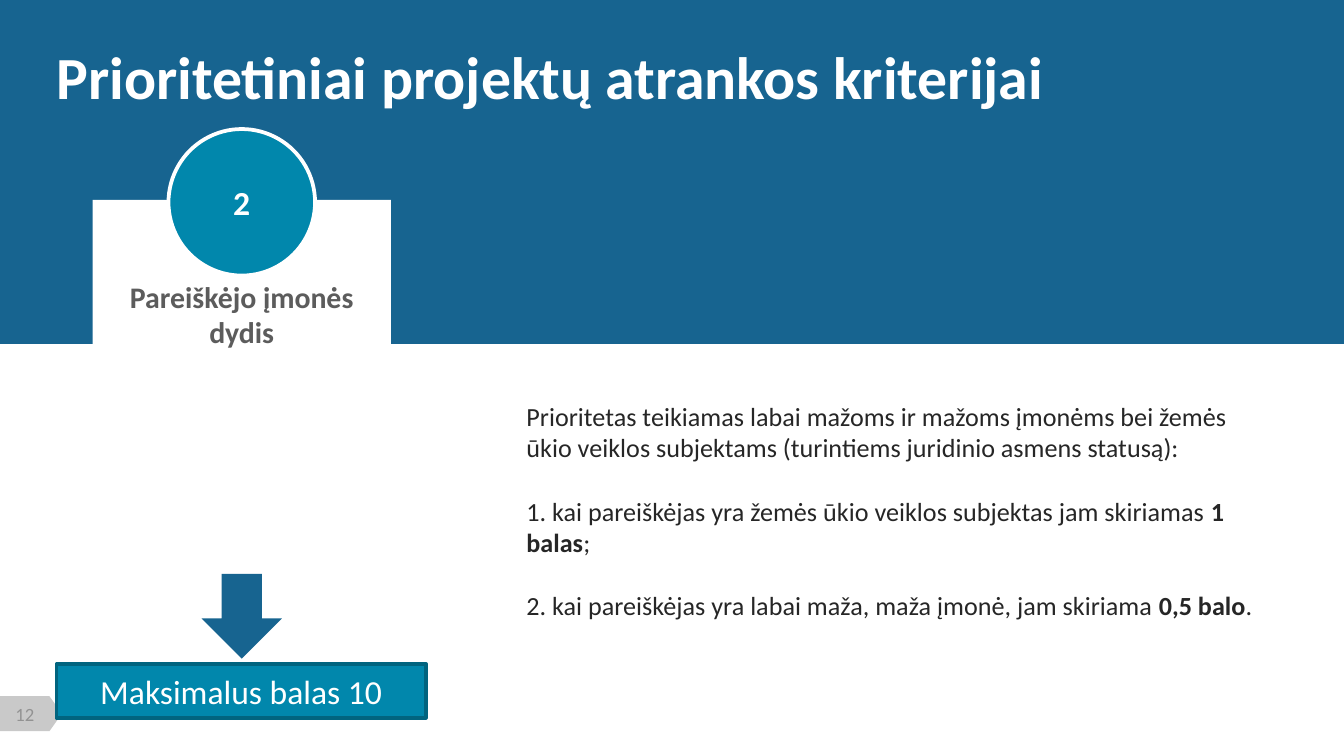
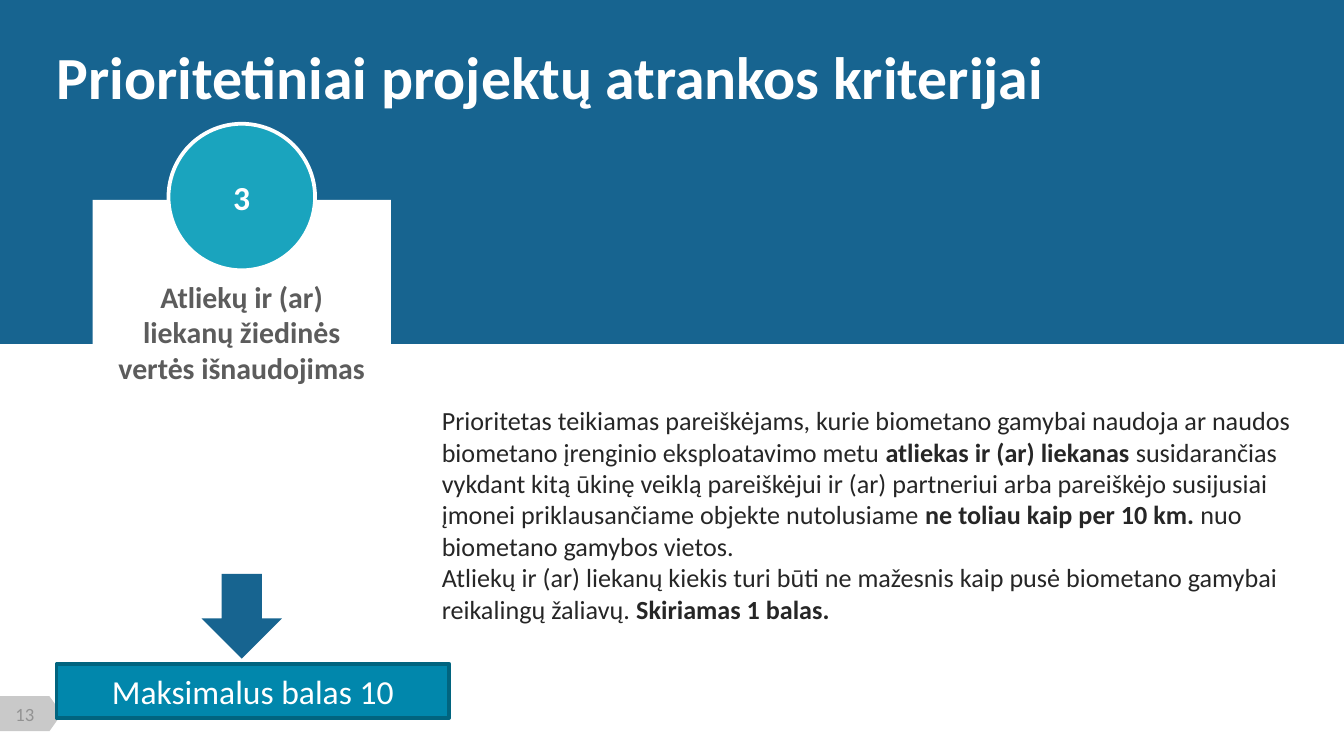
from dataclasses import dataclass

from pptx import Presentation
from pptx.dml.color import RGBColor
from pptx.enum.shapes import MSO_SHAPE
from pptx.enum.text import MSO_ANCHOR, PP_ALIGN
from pptx.util import Cm, Pt

RECT, OVAL = MSO_SHAPE.RECTANGLE, MSO_SHAPE.OVAL
CARD, TAB = MSO_SHAPE.FLOWCHART_DOCUMENT, MSO_SHAPE.FLOWCHART_OFFPAGE_CONNECTOR
ARROW = MSO_SHAPE.DOWN_ARROW
LEFT, CENTER = PP_ALIGN.LEFT, PP_ALIGN.CENTER
TOP, MIDDLE = MSO_ANCHOR.TOP, MSO_ANCHOR.MIDDLE


@dataclass(frozen=True)
class Theme:
    font: str = "Calibri"
    blue: str = "176490"
    teal: str = "0187AC"
    aqua: str = "1AA4BE"
    teal_edge: str = "01647F"
    white: str = "FFFFFF"
    tab: str = "C9C9C9"
    number: str = "929292"
    caption: str = "5C5C5C"
    body: str = "262626"
    title_size: int = 32
    label_size: int = 18
    caption_size: int = 16
    body_size: int = 14
    number_size: int = 10
    line: int = 2


T = Theme()
WIDTH, HEIGHT = 25.4, 14.29
INSETS = (0.25, 0.13, 0.25, 0.13)
NO_INSETS = (0, 0, 0, 0)
TITLE = "Prioritetiniai projektų atrankos kriterijai"
MAX_SCORE = "Maksimalus balas 10"

# Each body paragraph is a list of (text, bold) runs
CRITERIA = [
    dict(
        page=12, number="2", circle_color=T.teal, circle_rise=1.34,
        caption="Pareiškėjo įmonės dydis", score_width=6.98,
        body_box=(9.7, 7.44, 14.4, 4.45), gap=17.1,
        body=[
            [("Prioritetas teikiamas labai mažoms ir mažoms įmonėms bei žemės "
              "ūkio veiklos subjektams (turintiems juridinio asmens statusą):", False)],
            [("1. kai pareiškėjas yra žemės ūkio veiklos subjektas jam skiriamas ", False),
             ("1 balas", True), (";", False)],
            [("2. kai pareiškėjas yra labai maža, maža įmonė, jam skiriama ", False),
             ("0,5 balo", True), (".", False)],
        ],
    ),
    dict(
        page=13, number="3", circle_color=T.aqua, circle_rise=1.44,
        caption="Atliekų ir (ar) liekanų žiedinės vertės išnaudojimas",
        score_width=7.42, body_box=(8.1, 7.52, 17.02, 4.45), gap=0,
        body=[
            [("Prioritetas teikiamas pareiškėjams, kurie biometano gamybai naudoja ar "
              "naudos biometano įrenginio eksploatavimo metu ", False),
             ("atliekas ir (ar) liekanas ", True),
             ("susidarančias vykdant kitą ūkinę veiklą pareiškėjui ir (ar) partneriui "
              "arba pareiškėjo susijusiai įmonei priklausančiame objekte nutolusiame ", False),
             ("ne toliau kaip per 10 km. ", True),
             ("nuo biometano gamybos vietos.", False)],
            [("Atliekų ir (ar) liekanų kiekis turi būti ne mažesnis kaip pusė biometano "
              "gamybai reikalingų žaliavų. ", False),
             ("Skiriamas 1 balas.", True)],
        ],
    ),
]


def write(sp, paragraphs, *, size, color, bold=False, align=LEFT, anchor=TOP,
          insets=INSETS, gap=0):
    """Fill a shape with text: a string, or a list of paragraphs of (text, bold) runs."""
    if isinstance(paragraphs, str):
        paragraphs = [[(paragraphs, bold)]]
    tf = sp.text_frame
    tf.word_wrap = True
    tf.vertical_anchor = anchor
    tf.margin_left, tf.margin_top, tf.margin_right, tf.margin_bottom = map(Cm, insets)
    for i, runs in enumerate(paragraphs):
        p = tf.add_paragraph() if i else tf.paragraphs[0]
        p.alignment = align
        p.space_before = Pt(gap if i else 0)
        for text, is_bold in runs:
            r = p.add_run()
            r.text = text
            r.font.name, r.font.size, r.font.bold = T.font, Pt(size), is_bold
            r.font.color.rgb = RGBColor.from_string(color)


def add_text(s, box, paragraphs, **fmt):
    write(s.shapes.add_textbox(*map(Cm, box)), paragraphs, **fmt)


def add_shape(s, kind, box, fill, line=None):
    sp = s.shapes.add_shape(kind, *map(Cm, box))
    sp.shadow.inherit = False
    sp.fill.solid()
    sp.fill.fore_color.rgb = RGBColor.from_string(fill)
    if line:
        sp.line.color.rgb = RGBColor.from_string(line)
        sp.line.width = Pt(T.line)
    else:
        sp.line.fill.background()
    return sp


def add_page_number(s, box, page):
    x, y, w, h = box
    # The tab stands upright before its quarter turn
    tab = add_shape(s, TAB, (x + (w - h) / 2, y + (h - w) / 2, h, w), T.tab)
    tab.rotation = 270
    add_text(s, (x + 0.05, y + 0.12, 0.84, 0.43), str(page), size=T.number_size,
             color=T.number, align=CENTER, anchor=MIDDLE, insets=NO_INSETS)


def add_header(s, box):
    x, y, w, h = box
    add_shape(s, RECT, box, T.blue)
    add_text(s, (x + 1.07, y + 0.94, w - 2.57, 0.99), TITLE, size=T.title_size,
             color=T.white, bold=True, anchor=MIDDLE, insets=(0, 0.13, 0.25, 0.13))


def add_card(s, box, criterion):
    x, y, w, h = box
    add_shape(s, CARD, box, T.white)
    # Numbered circle over the top edge
    d = 2.77
    circle = add_shape(s, OVAL, (x + (w - d) / 2, y - criterion["circle_rise"], d, d),
                       criterion["circle_color"], T.white)
    write(circle, criterion["number"], size=T.label_size, color=T.white, bold=True,
          align=CENTER, anchor=MIDDLE)
    # Caption
    cw = 4.7
    add_text(s, (x + (w - cw) / 2, y + 1.48, cw, 2.06), criterion["caption"],
             size=T.caption_size, color=T.caption, bold=True, align=CENTER,
             insets=NO_INSETS)


def add_score(s, box):
    x, y, w, h = box
    bar = 1.02
    add_shape(s, ARROW, (x + 2.74, y, 1.52, 1.6), T.blue)
    sp = add_shape(s, RECT, (x, y + h - bar, w, bar), T.teal, T.teal_edge)
    write(sp, MAX_SCORE, size=T.label_size, color=T.white, align=CENTER)


def add_criterion_slide(prs, criterion):
    s = prs.slides.add_slide(prs.slide_layouts[6])
    add_page_number(s, (0, 13.16, 1.17, 0.66), criterion["page"])
    add_header(s, (0, 0, WIDTH, 6.5))
    add_card(s, (1.75, 3.78, 5.64, 7.16), criterion)
    add_text(s, criterion["body_box"], criterion["body"], size=T.body_size,
             color=T.body, gap=criterion["gap"])
    add_score(s, (1.07, 10.85, criterion["score_width"], 2.72))


def main():
    prs = Presentation()
    prs.slide_width, prs.slide_height = Cm(WIDTH), Cm(HEIGHT)
    for criterion in CRITERIA:
        add_criterion_slide(prs, criterion)
    prs.save("out.pptx")


if __name__ == "__main__":
    main()
